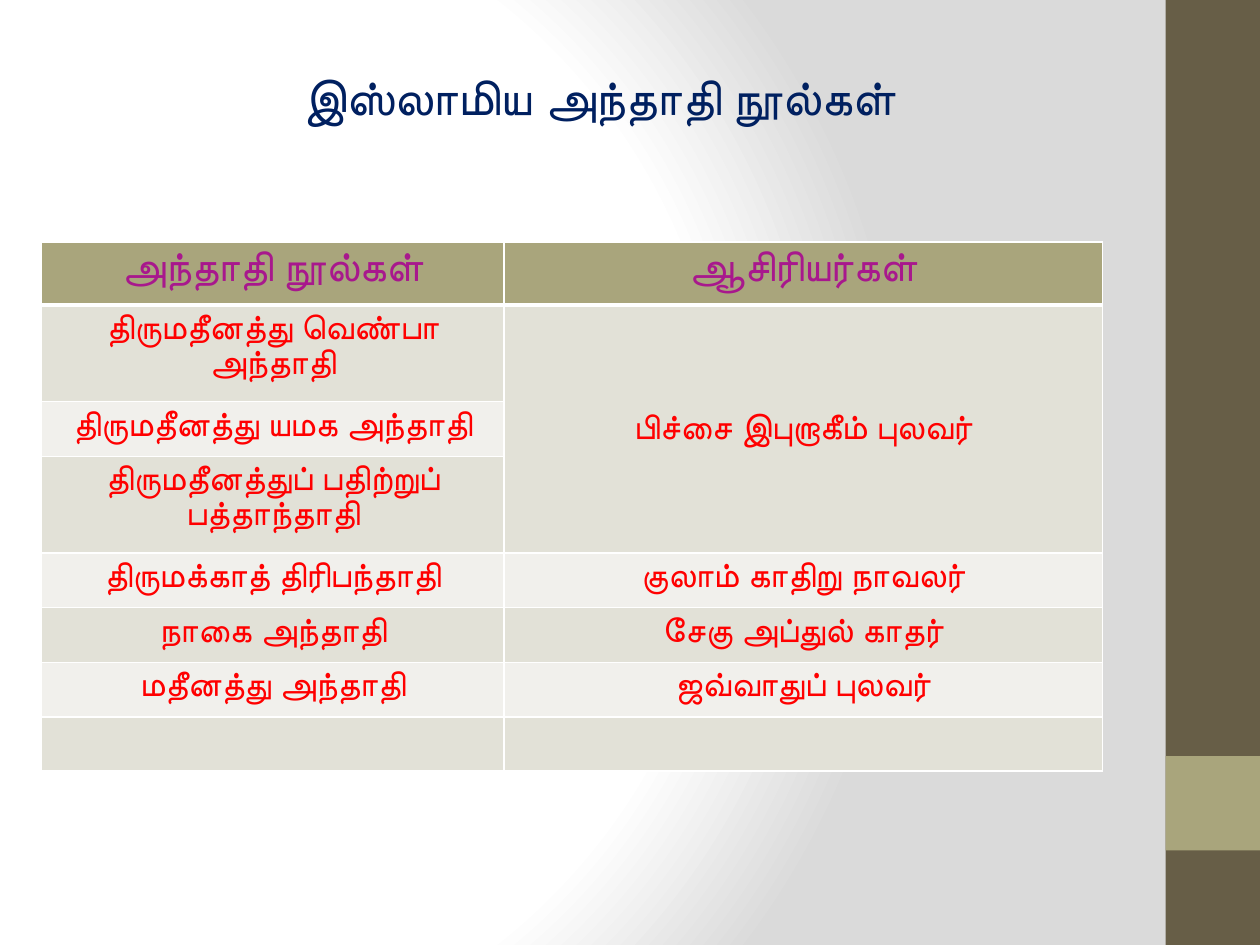
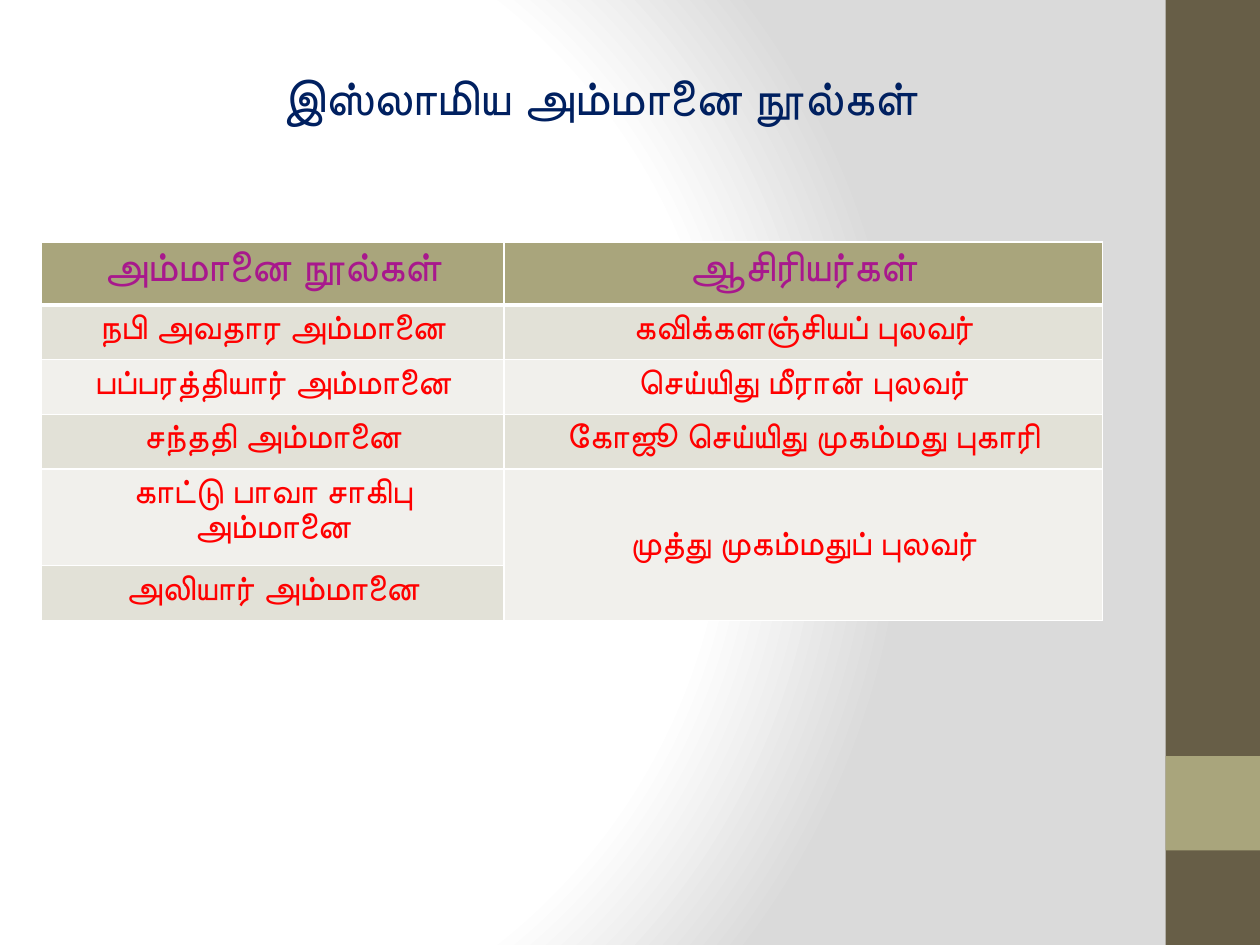
from lxml.etree import SubElement
from pptx import Presentation
from pptx.dml.color import RGBColor
from pptx.enum.shapes import MSO_SHAPE
from pptx.enum.text import MSO_ANCHOR, MSO_AUTO_SIZE, PP_ALIGN
from pptx.oxml import parse_xml
from pptx.oxml.ns import nsdecls, qn
from pptx.util import Inches, Pt

FONT = "Noto Sans Mono"
WHITE, GREY = "FFFFFF", "DADADA"
BROWN, OLIVE = "675E47", "A9A57C"
NAVY, MAGENTA, RED = "002060", "A8188D", "FF0000"
STRIPES = "E2E1D7", "F1F0EC"
GRID = 0.25  # inches; the slide is 40 columns by 30 rows

AUTHORS_HEADING = "ஆசிரியர்கள்"
# Each slide: title, heading of the works column, works grouped by author
SLIDES = [
    ("இஸ்லாமிய அந்தாதி நூல்கள்", "அந்தாதி நூல்கள்", [
        ("பிச்சை இபுறாகீம் புலவர்", ["திருமதீனத்து வெண்பா அந்தாதி",
                                    "திருமதீனத்து யமக அந்தாதி",
                                    "திருமதீனத்துப் பதிற்றுப் பத்தாந்தாதி"]),
        ("குலாம் காதிறு நாவலர்", ["திருமக்காத் திரிபந்தாதி"]),
        ("சேகு அப்துல் காதர்", ["நாகை அந்தாதி"]),
        ("ஜவ்வாதுப் புலவர்", ["மதீனத்து அந்தாதி"]),
        ("", [""]),
    ]),
    ("இஸ்லாமிய அம்மானை நூல்கள்", "அம்மானை நூல்கள்", [
        ("கவிக்களஞ்சியப் புலவர்", ["நபி அவதார அம்மானை"]),
        ("செய்யிது மீரான் புலவர்", ["பப்பரத்தியார் அம்மானை"]),
        ("கோஜூ செய்யிது முகம்மது புகாரி", ["சந்ததி அம்மானை"]),
        ("முத்து முகம்மதுப் புலவர்", ["காட்டு பாவா சாகிபு அம்மானை",
                                    "அலியார் அம்மானை"]),
    ]),
]


def rgb(color):
    return RGBColor.from_string(color)


def grid(*cells):
    return [Inches(cell * GRID) for cell in cells]


def write(frame, text, size, color, bold=False, align=PP_ALIGN.CENTER):
    paragraph = frame.paragraphs[0]
    paragraph.alignment = align
    if text:
        run = paragraph.add_run()
        run.text = text
        run.font.name = FONT
        run.font.size = Pt(size)
        run.font.bold = bold
        run.font.color.rgb = rgb(color)


def set_borders(cell, color, **widths):
    """Draw the sides L, R, T and B in the given widths (points)."""
    properties = cell._tc.get_or_add_tcPr()
    for side, width in widths.items():
        line = SubElement(properties, qn(f"a:ln{side}"), w=str(Pt(width)))
        fill = SubElement(line, qn("a:solidFill"))
        SubElement(fill, qn("a:srgbClr"), val=color)


class Deck:
    """Holds the shared style and the current slide."""

    def __init__(self):
        self.presentation = Presentation()
        self.presentation.slide_width, self.presentation.slide_height = grid(40, 30)
        self.slide = None
        self.set_background()

    def set_background(self):
        master = self.presentation.slide_master
        master.background.fill.gradient()
        gradient = next(master.element.iter(qn("a:gradFill")))
        stops = "".join(
            f'<a:gs pos="{share * 1000}"><a:srgbClr val="{color}"/></a:gs>'
            for share, color in ((0, WHITE), (75, WHITE), (100, GREY)))
        gradient.getparent().replace(gradient, parse_xml(
            f'<a:gradFill {nsdecls("a")} rotWithShape="1"><a:gsLst>{stops}</a:gsLst>'
            '<a:path path="circle"><a:fillToRect l="20000" t="50000" '
            'r="100000" b="50000"/></a:path></a:gradFill>'))

    def new_slide(self, title):
        self.slide = self.presentation.slides.add_slide(
            self.presentation.slide_layouts[6])
        self.band(37, 0, 3, 30, BROWN)
        self.band(37, 24, 3, 3, OLIVE)
        self.title(title)

    def band(self, left, top, width, height, color):
        band = self.slide.shapes.add_shape(
            MSO_SHAPE.RECTANGLE, *grid(left, top, width, height))
        band.shadow.inherit = False
        band.fill.solid()
        band.fill.fore_color.rgb = rgb(color)
        band.line.fill.background()

    def title(self, text):
        frame = self.slide.shapes.add_textbox(*grid(5.2, 1.92, 27.68, 2.28)).text_frame
        frame.word_wrap = True
        frame.auto_size = MSO_AUTO_SIZE.SHAPE_TO_FIT_TEXT
        write(frame, text, size=28, color=NAVY, bold=True)

    def cell(self, cell, text, fill, top=1, bottom=1, **text_format):
        set_borders(cell, WHITE, L=1, R=1, T=top, B=bottom)
        cell.fill.solid()
        cell.fill.fore_color.rgb = rgb(fill)
        write(cell.text_frame, text, **text_format)

    def works_table(self, heading, groups):
        """Add one row per work; an author's cell spans all of their works."""
        row_count = 1 + sum(len(works) for _, works in groups)
        column_widths = grid(14.68, 19)
        table = self.slide.shapes.add_table(
            row_count, 2, *grid(1.32, 7.68, 33.68, 1.72 * row_count)).table
        for column, width in zip(table.columns, column_widths):
            column.width = width

        for column, text in enumerate((heading, AUTHORS_HEADING)):
            self.cell(table.cell(0, column), text, OLIVE, bottom=3,
                      size=24, color=MAGENTA, bold=True)
        row = 1
        for author, works in groups:
            first = row
            for work in works:
                for column, text in enumerate((work, author if row == first else "")):
                    self.cell(table.cell(row, column), text, STRIPES[(row - 1) % 2],
                              top=3 if row == 1 else 1, size=20, color=RED)
                row += 1
            if len(works) > 1:
                author_cell = table.cell(first, 1)
                author_cell.merge(table.cell(row - 1, 1))
                author_cell.vertical_anchor = MSO_ANCHOR.MIDDLE


def main():
    deck = Deck()
    for title, heading, groups in SLIDES:
        deck.new_slide(title)
        deck.works_table(heading, groups)
    deck.presentation.save("out.pptx")


if __name__ == "__main__":
    main()
